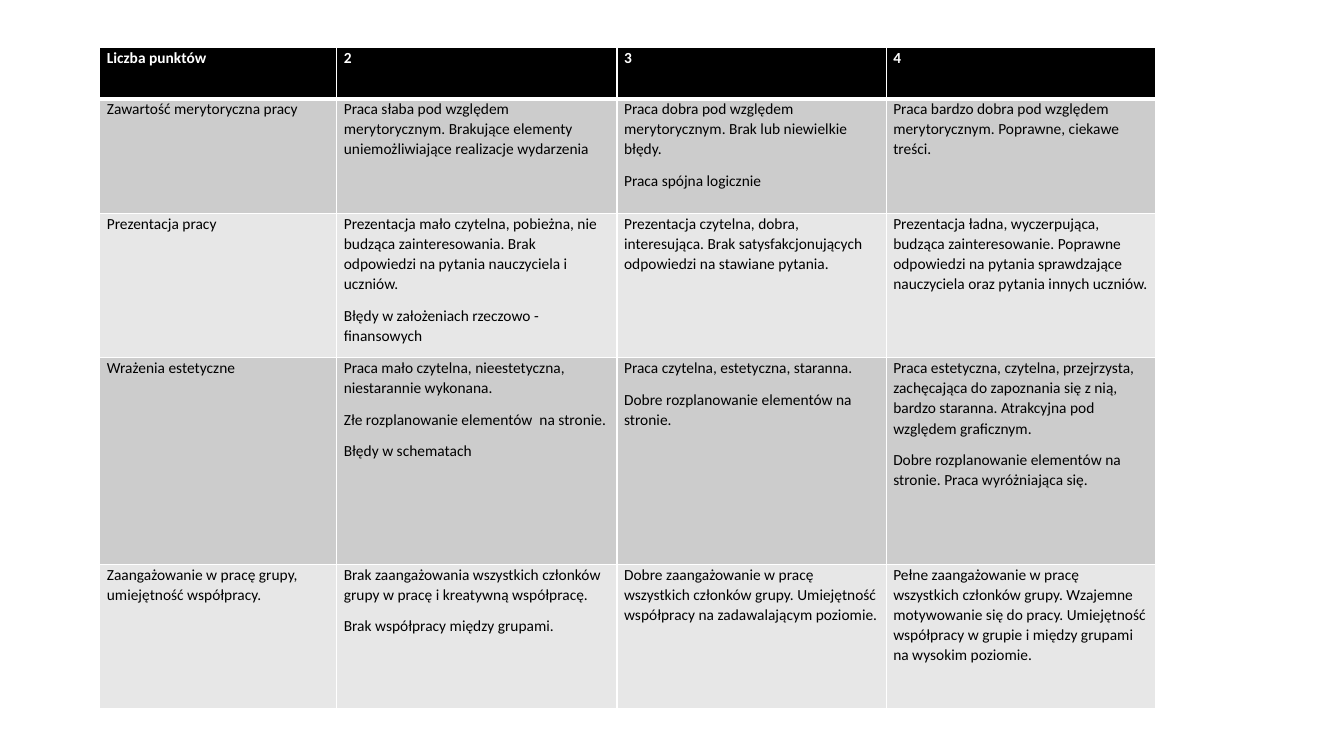
from lxml import etree
from pptx import Presentation
from pptx.dml.color import RGBColor
from pptx.enum.text import MSO_ANCHOR, PP_ALIGN
from pptx.oxml.ns import qn
from pptx.util import Inches, Pt

LEFT, TOP = PP_ALIGN.LEFT, MSO_ANCHOR.TOP

COLORS = {
    "header": "000000",
    "band_dark": "CCCCCC",
    "band_light": "E7E7E7",
    "border": "FFFFFF",
    "header_text": "FFFFFF",
    "text": "000000",
}

COL_WIDTHS = [2.35, 2.78, 2.67, 2.67]
ROW_HEIGHTS = [0.51, 1.14, 1.43, 2.05, 1.43]

# Each cell is a list of paragraphs
RUBRIC = [
    [["Liczba punktów"], ["2"], ["3"], ["4"]],
    [
        ["Zawartość merytoryczna pracy"],
        ["Praca słaba pod względem merytorycznym. Brakujące elementy "
         "uniemożliwiające realizacje wydarzenia"],
        ["Praca dobra pod względem merytorycznym. Brak lub niewielkie błędy.",
         "Praca spójna logicznie"],
        ["Praca bardzo dobra pod względem merytorycznym. Poprawne, ciekawe treści."],
    ],
    [
        ["Prezentacja pracy"],
        ["Prezentacja mało czytelna, pobieżna, nie budząca zainteresowania. "
         "Brak odpowiedzi na pytania nauczyciela i uczniów.",
         "Błędy w założeniach rzeczowo - finansowych"],
        ["Prezentacja czytelna, dobra, interesująca. Brak satysfakcjonujących "
         "odpowiedzi na stawiane pytania."],
        ["Prezentacja ładna, wyczerpująca, budząca zainteresowanie. Poprawne "
         "odpowiedzi na pytania sprawdzające nauczyciela oraz pytania innych uczniów."],
    ],
    [
        ["Wrażenia estetyczne"],
        ["Praca mało czytelna, nieestetyczna, niestarannie wykonana.",
         "Złe rozplanowanie elementów  na stronie.",
         "Błędy w schematach"],
        ["Praca czytelna, estetyczna, staranna.",
         "Dobre rozplanowanie elementów na stronie."],
        ["Praca estetyczna, czytelna, przejrzysta, zachęcająca do zapoznania się "
         "z nią, bardzo staranna. Atrakcyjna pod względem graficznym.",
         "Dobre rozplanowanie elementów na stronie. Praca wyróżniająca się."],
    ],
    [
        ["Zaangażowanie w pracę grupy, umiejętność współpracy."],
        ["Brak zaangażowania wszystkich członków grupy w pracę i kreatywną współpracę.",
         "Brak współpracy między grupami."],
        ["Dobre zaangażowanie w pracę wszystkich członków grupy. Umiejętność "
         "współpracy na zadawalającym poziomie."],
        ["Pełne zaangażowanie w pracę wszystkich członków grupy. Wzajemne "
         "motywowanie się do pracy. Umiejętność współpracy w grupie i między "
         "grupami na wysokim poziomie."],
    ],
]


def add_text(tf, paragraphs, *, font, size, color, bold=False):
    """Fill a text frame with one formatted run per paragraph."""
    tf.word_wrap = True
    for i, text in enumerate(paragraphs):
        p = tf.add_paragraph() if i else tf.paragraphs[0]
        p.alignment = LEFT
        p.line_spacing = 1.06
        p.space_after = Pt(8)
        r = p.add_run()
        r.text = text
        r.font.name = font
        r.font.size = Pt(size)
        r.font.bold = bold
        r.font.color.rgb = RGBColor.from_string(COLORS[color])


class SlideBuilder:
    """Holds the text style and the current slide."""

    def __init__(self, slide, font="Calibri", size=11):
        self.slide = slide
        self.font = font
        self.size = size

    def border(self, cell, side, width):
        ln = etree.SubElement(cell._tc.get_or_add_tcPr(), qn(f"a:ln{side}"),
                              w=str(Pt(width)))
        fill = etree.SubElement(ln, qn("a:solidFill"))
        etree.SubElement(fill, qn("a:srgbClr"), val=COLORS["border"])

    def cell(self, cell, paragraphs, row):
        header = row == 0
        cell.margin_left = cell.margin_right = Inches(0.07)
        cell.margin_top = cell.margin_bottom = 0
        cell.vertical_anchor = TOP

        # The line under the header is thicker
        widths = {"L": 1, "R": 1, "T": 3 if row == 1 else 1, "B": 3 if header else 1}
        for side, width in widths.items():
            self.border(cell, side, width)

        band = "header" if header else "band_dark" if row % 2 else "band_light"
        cell.fill.solid()
        cell.fill.fore_color.rgb = RGBColor.from_string(COLORS[band])
        add_text(cell.text_frame, paragraphs, font=self.font, size=self.size,
                 color="header_text" if header else "text", bold=header)

    def table(self, left, top, col_widths, row_heights, rows):
        frame = self.slide.shapes.add_table(
            len(rows), len(col_widths), Inches(left), Inches(top),
            Inches(sum(col_widths)), Inches(sum(row_heights)))
        table = frame.table
        for col, width in zip(table.columns, col_widths):
            col.width = Inches(width)
        for row, height in zip(table.rows, row_heights):
            row.height = Inches(height)
        for i, row in enumerate(rows):
            for j, paragraphs in enumerate(row):
                self.cell(table.cell(i, j), paragraphs, i)


def main():
    prs = Presentation()
    prs.slide_width, prs.slide_height = Inches(13.33), Inches(7.5)
    s = prs.slides.add_slide(prs.slide_layouts[6])

    # Grading rubric
    SlideBuilder(s).table(0.99, 0.47, COL_WIDTHS, ROW_HEIGHTS, RUBRIC)
    prs.save("out.pptx")


if __name__ == "__main__":
    main()
